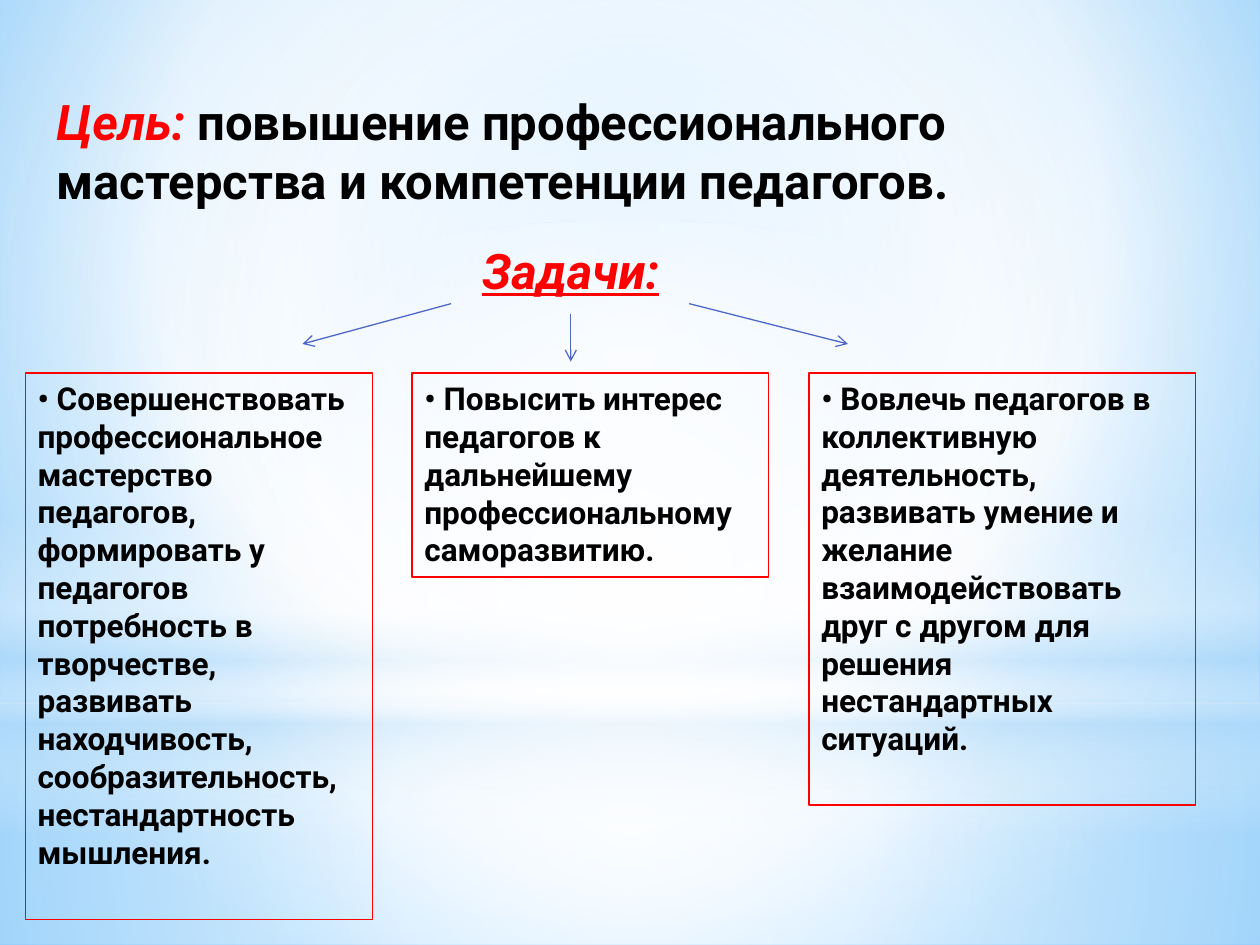
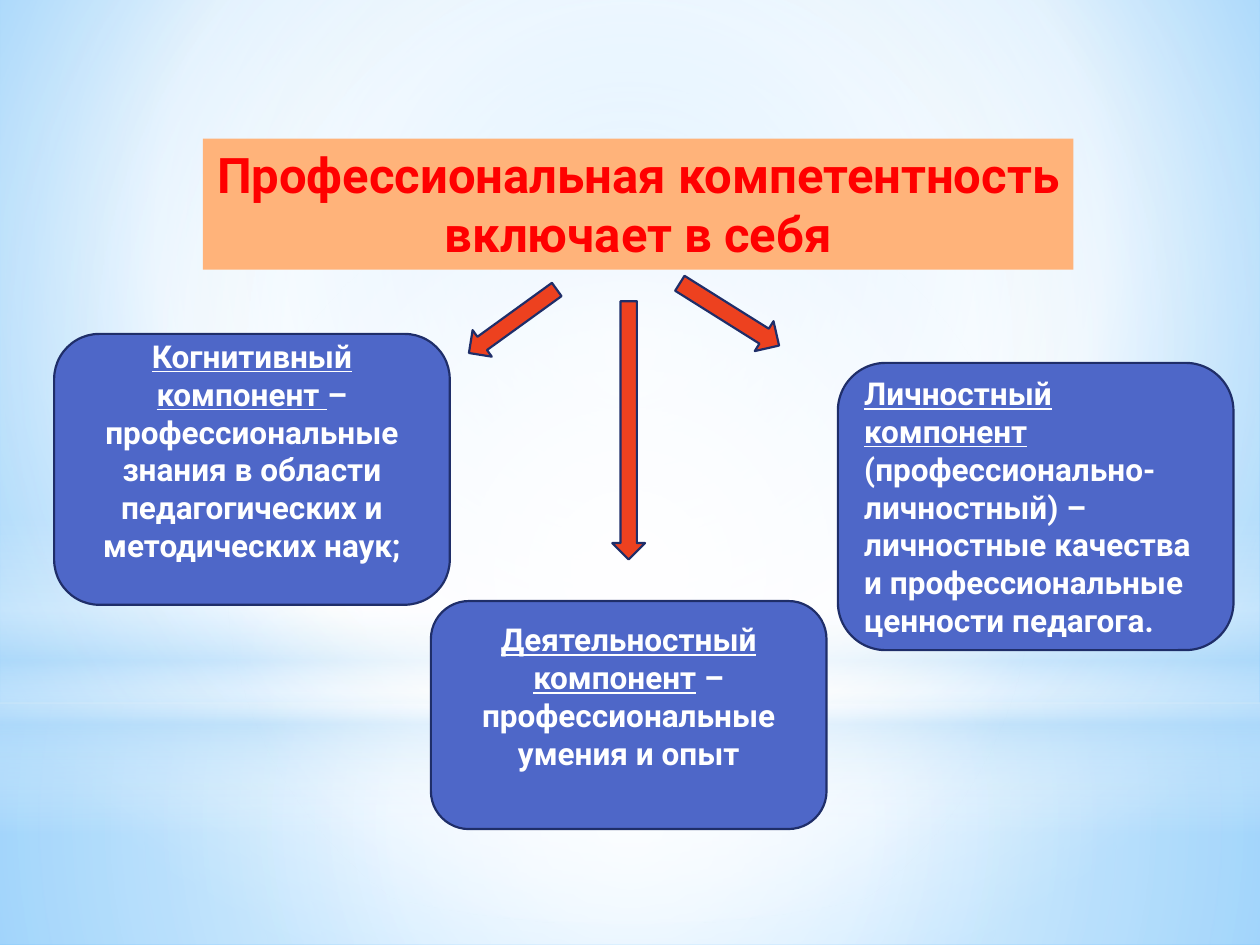
"""Build two slides on the goal, tasks and components of teachers' professional competence."""
import pptx
import pptx.util
import pptx.dml.color
import pptx.enum.shapes
import pptx.enum.text
import pptx.oxml
import pptx.oxml.ns

C = {"red": "FF0000", "black": "000000", "white": "FFFFFF", "blue": "4E67C8",
     "navy": "1F2E69", "orange": "ED411F", "peach": "FFB37A",
     "sky": "9ED5FF", "deep": "5BB9FF", "pale": "B4DCFA"}
MSO = pptx.enum.shapes.MSO_SHAPE
ALIGN = pptx.enum.text.PP_ALIGN
ANCHOR = pptx.enum.text.MSO_ANCHOR
Pt = pptx.util.Pt
FONT = {"name": "Roboto", "bold": True}
HEAD = FONT | {"size": Pt(28)}
BODY = FONT | {"size": Pt(18)}

prs = pptx.Presentation()
prs.slide_width = pptx.util.Inches(10)
prs.slide_height = pptx.util.Inches(7.5)
COLS, ROWS = 100, 75
COL, ROW = prs.slide_width / COLS, prs.slide_height / ROWS


def set_gradient(grad, stops, direction):
    """Replace a gradient fill with stops of (position, colour, opacity)."""
    gs = "".join(
        f'<a:gs pos="{pos * 1000}"><a:srgbClr val="{C[color]}">'
        f'<a:alpha val="{alpha * 1000}"/></a:srgbClr></a:gs>'
        for pos, color, alpha in stops)
    grad.getparent().replace(grad, pptx.oxml.parse_xml(
        f'<a:gradFill {pptx.oxml.ns.nsdecls("a")} rotWithShape="1">'
        f'<a:gsLst>{gs}</a:gsLst>{direction}</a:gradFill>'))


def add_box(s, kind, at, paragraphs=(), fill=None, line=None, width=0.75,
            align=ALIGN.LEFT, frame=None):
    """Add a shape, or a text box when kind is None, placed on the grid."""
    x, y, w, h = at
    area = [round(v) for v in (x * COL, y * ROW, w * COL, h * ROW)]
    if kind is None:
        sp = s.shapes.add_textbox(*area)
    else:
        sp = s.shapes.add_shape(kind, *area)
        sp.shadow.inherit = False
    for part, color in ((sp.fill, fill), (sp.line.fill, line)):
        if color:
            part.solid()
            part.fore_color.rgb = pptx.dml.color.RGBColor.from_string(C[color])
        else:
            part.background()
    if line:
        sp.line.width = Pt(width)
    tf = sp.text_frame
    values = {"word_wrap": True, "vertical_anchor": ANCHOR.TOP} | (frame or {})
    for name, value in values.items():
        setattr(tf, name, value)
    for i, runs in enumerate(paragraphs):
        p = tf.add_paragraph() if i else tf.paragraphs[0]
        p.alignment = align
        for text, color, font in runs:
            r = p.add_run()
            r.text = text
            r.font.color.rgb = pptx.dml.color.RGBColor.from_string(C[color])
            for name, value in font.items():
                setattr(r.font, name, value)
    return sp


CIRCLE = '<a:path path="circle"><a:fillToRect l="{}" t="{}" r="{}" b="{}"/></a:path>'
CENTRE = CIRCLE.format(*[50000] * 4)
DOWN = '<a:lin ang="5400000" scaled="0"/>'

master = prs.slide_master
master.background.fill.gradient()
set_gradient(master.element.xpath("./p:cSld/p:bg/p:bgPr/a:gradFill")[0],
             [(0, "sky", 100), (60, "white", 100), (100, "deep", 100)],
             CIRCLE.format(20000, 10000, 20000, 60000))

goal, parts = [prs.slides.add_slide(prs.slide_layouts[6]) for _ in range(2)]

horizon = 55.8
bands = [
    (MSO.RECTANGLE, (0, horizon, COLS, ROWS - horizon), CENTRE,
     [(0, "white", 91), (37, "white", 76), (100, "pale", 79)]),
    (MSO.RECTANGLE, (0, 0, COLS, horizon), CENTRE,
     [(0, "white", 89), (48, "white", 62), (100, "pale", 79)]),
    (MSO.RECTANGLE, (0, 41.2, COLS, 25), DOWN,
     [(0, "white", 0), (29, "white", 30), (45, "pale", 40),
      (55, "white", 26), (65, "pale", 60), (100, "white", 0)]),
    (MSO.OVAL, (0, 17.5, COLS, horizon), CENTRE,
     [(0, "white", 100), (56, "white", 0)]),
]
for i, (kind, at, direction, stops) in enumerate(bands):
    sp = add_box(goal, kind, at)
    sp.fill.gradient()
    set_gradient(sp.element.xpath("./p:spPr/a:gradFill")[0], stops, direction)
    sp.element.xpath("./p:nvSpPr/p:cNvPr")[0].set("id", str(100 + i))
    master.shapes.element.append(sp.element)

add_box(goal, None, (3.5, 6.8, 89.8, 10.4), [[
    ("Цель: ", "red", HEAD | {"italic": True}),
    ("повышение профессионального мастерства и компетенции педагогов.", "black", HEAD)]])
add_box(goal, None, (34.3, 18.6, 22, 5.7),
        [[("Задачи:", "red", HEAD | {"italic": True, "underline": True})]],
        align=ALIGN.CENTER)

tasks = [
    (2, 27.6, 43.4, ["• Совершенствовать профессиональное мастерство педагогов, "
                     "формировать у педагогов потребность в творчестве, развивать "
                     "находчивость, сообразительность, нестандартность мышления."]),
    (32.7, 28.3, 16.2, ["• Повысить интерес педагогов к дальнейшему профессиональному",
                        "саморазвитию."]),
    (64.2, 30.7, 34.3, ["• Вовлечь педагогов в коллективную деятельность, развивать "
                        "умение и желание взаимодействовать друг с другом для решения "
                        "нестандартных ситуаций."]),
]
for x, w, h, texts in tasks:
    add_box(goal, MSO.RECTANGLE, (x, 29.6, w, h),
            [[(text, "black", BODY)] for text in texts], line="red")

for x1, y1, x2, y2 in [(35.8, 24.1, 24, 27.3), (54.7, 24.1, 67.3, 27.3),
                       (45.3, 24.9, 45.3, 28.7)]:
    cx = goal.shapes.add_connector(
        pptx.enum.shapes.MSO_CONNECTOR.STRAIGHT,
        round(x1 * COL), round(y1 * ROW), round(x2 * COL), round(y2 * ROW))
    cx.line.color.rgb = pptx.dml.color.RGBColor.from_string(C["blue"])
    cx.line.width = Pt(0.75)
    for parent, tag in ((cx.line._get_or_add_ln(), 'tailEnd type="arrow"'),
                        (cx.element.spPr, "effectLst")):
        name, _, attr = tag.partition(" ")
        parent.append(pptx.oxml.parse_xml(
            f'<a:{name} {pptx.oxml.ns.nsdecls("a")} {attr}/>'))

add_box(parts, MSO.RECTANGLE, (16.1, 11, 69.1, 10.4),
        [[("Профессиональная компетентность включает в себя", "red", HEAD)]],
        fill="peach", align=ALIGN.CENTER)

components = [
    (4.3, 26.5, 21.5, ALIGN.CENTER, 0.35, "Когнитивный компонент ",
     "– профессиональные знания в области педагогических и методических наук;"),
    (34.2, 47.7, 18.1, ALIGN.CENTER, 0.35, "Деятельностный компонент",
     " – профессиональные умения и опыт"),
    (66.5, 28.8, 22.8, ALIGN.LEFT, 0.05, "Личностный компонент",
     " (профессионально-личностный) – личностные качества и профессиональные "
     "ценности педагога."),
]
for x, y, h, align, bottom, name, meaning in components:
    add_box(parts, MSO.ROUNDED_RECTANGLE, (x, y, 31.4, h),
            [[(name, "white", BODY | {"underline": True}), (meaning, "white", BODY)]],
            fill="blue", line="navy", width=1.25, align=align,
            frame={"vertical_anchor": ANCHOR.MIDDLE,
                   "margin_bottom": pptx.util.Inches(bottom)})

for at, angle in [((39.4, 21.2, 2.6, 8.6), 54.1), ((48.6, 23.9, 2.6, 20.5), 0),
                  ((56.5, 20.3, 2.8, 9.3), 302.1)]:
    sp = add_box(parts, MSO.DOWN_ARROW, at, fill="orange", line="navy", width=1.25)
    sp.rotation = angle

prs.save("out.pptx")
